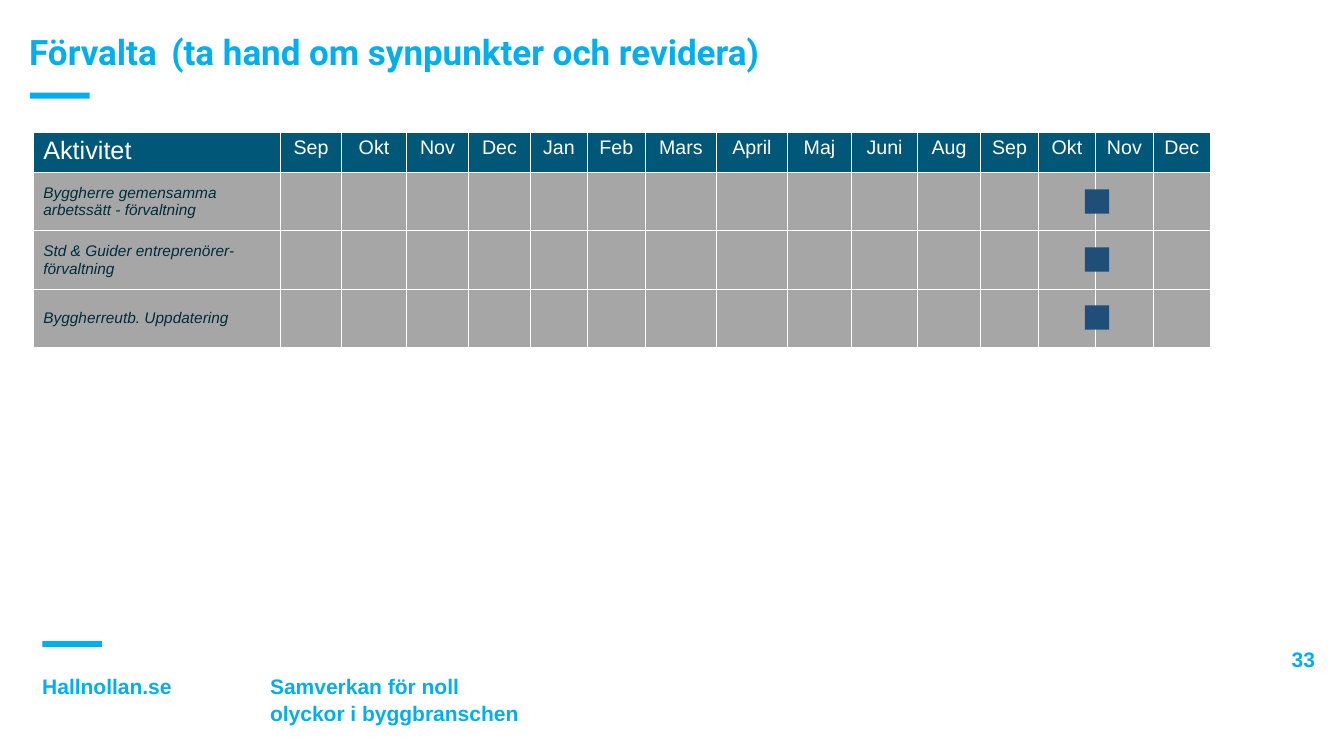
from lxml import etree
from pptx import Presentation
from pptx.dml.color import RGBColor
from pptx.enum import shapes, text
from pptx.oxml import ns
from pptx.util import Inches, Pt

SKY, TEAL, NAVY = "01AFEF", "005777", "1F4E79"
GREY, INK, WHITE = "A6A6A6", "002C3C", "FFFFFF"

MONTHS = ["Sep", "Okt", "Nov", "Dec", "Jan", "Feb", "Mars", "April",
          "Maj", "Juni", "Aug", "Sep", "Okt", "Nov", "Dec"]
ACTIVITIES = ["Byggherre gemensamma arbetssätt - förvaltning",
              "Std & Guider entreprenörer- förvaltning",
              "Byggherreutb. Uppdatering"]
COLUMN_WIDTHS = [2.45, 0.61, 0.64, 0.62, 0.61, 0.57, 0.57, 0.71,
                 0.7, 0.64, 0.65, 0.63, 0.57, 0.57, 0.57, 0.57]
TABLE_TOP, HEADER_HEIGHT, ROW_HEIGHT = 1.31, 0.4, 0.58


def rgb(hex_colour):
    return RGBColor.from_string(hex_colour)


def style_font(font, size, colour, name="Arial", bold=False, italic=False):
    font.name, font.size = name, Pt(size)
    font.bold, font.italic = bold, italic
    font.color.rgb = rgb(colour)


def add_block(slide, left, top, width, height, colour):
    block = slide.shapes.add_shape(
        shapes.MSO_SHAPE.RECTANGLE, Inches(left), Inches(top), Inches(width), Inches(height))
    block.shadow.inherit = False
    block.fill.solid()
    block.fill.fore_color.rgb = rgb(colour)
    block.line.fill.background()


def add_frame(slide, left, top, width, height):
    box = slide.shapes.add_textbox(Inches(left), Inches(top), Inches(width), Inches(height))
    box.text_frame.word_wrap = True
    return box.text_frame


def add_footer(slide, left, top, height, wording, align=text.PP_ALIGN.LEFT):
    frame = add_frame(slide, left, top, 3.52, height)
    frame.text = wording
    for paragraph in frame.paragraphs:
        paragraph.alignment = align
        paragraph.line_spacing = Pt(19)
        style_font(paragraph.runs[0].font, 15, SKY, bold=True)


def add_title(slide):
    frame = add_frame(slide, 0.29, 0.19, 11.5, 0.6)
    frame.margin_left = 0
    frame.vertical_anchor = text.MSO_ANCHOR.BOTTOM
    heading = frame.paragraphs[0]
    heading.line_spacing = 0.7
    for wording, size, font_name in [("Förvalta", 25, "Roboto"), (" ", 37.5, "Arial"),
                                     ("(ta hand om synpunkter och revidera)", 25, "Roboto")]:
        run = heading.add_run()
        run.text = wording
        style_font(run.font, size, SKY, font_name, bold=True)


def set_borders(cell):
    """Put a thin white line on all four sides; lines must precede the fill."""
    properties = cell._tc.get_or_add_tcPr()
    for position, side in enumerate(["lnL", "lnR", "lnT", "lnB"]):
        line = etree.Element(ns.qn(f"a:{side}"), w=str(Pt(1)))
        fill = etree.SubElement(line, ns.qn("a:solidFill"))
        etree.SubElement(fill, ns.qn("a:srgbClr"), val=WHITE)
        properties.insert(position, line)


def fill_cell(cell, wording, colour, size, font_colour, italic=False):
    cell.fill.solid()
    cell.fill.fore_color.rgb = rgb(colour)
    set_borders(cell)
    cell.text = wording
    style_font(cell.text_frame.paragraphs[0].font, size, font_colour, italic=italic)
    for run in cell.text_frame.paragraphs[0].runs:
        style_font(run.font, size, font_colour, italic=italic)


def add_schedule(slide):
    schedule = slide.shapes.add_table(
        len(ACTIVITIES) + 1, len(COLUMN_WIDTHS), Inches(0.33), Inches(TABLE_TOP),
        Inches(sum(COLUMN_WIDTHS)),
        Inches(HEADER_HEIGHT + ROW_HEIGHT * len(ACTIVITIES))).table
    for column, width in zip(schedule.columns, COLUMN_WIDTHS):
        column.width = Inches(width)
    schedule.rows[0].height = Inches(HEADER_HEIGHT)

    fill_cell(schedule.cell(0, 0), "Aktivitet", TEAL, 18, WHITE)
    for column, month in enumerate(MONTHS, start=1):
        month_cell = schedule.cell(0, column)
        fill_cell(month_cell, month, TEAL, 14, WHITE)
        month_cell.text_frame.paragraphs[0].alignment = text.PP_ALIGN.CENTER

    for row, activity in enumerate(ACTIVITIES, start=1):
        schedule.rows[row].height = Inches(ROW_HEIGHT)
        for column in range(len(COLUMN_WIDTHS)):
            cell = schedule.cell(row, column)
            fill_cell(cell, "" if column else activity, GREY, 11, INK, italic=True)
            cell.vertical_anchor = text.MSO_ANCHOR.MIDDLE


def add_milestones(slide):
    for row in range(len(ACTIVITIES)):
        add_block(slide, 10.76, 1.88 + row * 0.575, 0.24, 0.24, NAVY)


def main():
    deck = Presentation()
    deck.slide_width, deck.slide_height = Inches(13.33), Inches(7.5)
    slide = deck.slides.add_slide(deck.slide_layouts[6])

    add_footer(slide, 2.58, 6.62, 0.63, "Samverkan för noll\nolyckor i byggbranschen")
    add_footer(slide, 0.32, 6.62, 0.35, "Hallnollan.se")
    add_block(slide, 0.42, 6.36, 0.59, 0.06, SKY)
    add_block(slide, 0.3, 0.92, 0.59, 0.06, SKY)
    add_footer(slide, 9.62, 6.35, 0.35, "33", text.PP_ALIGN.RIGHT)
    add_schedule(slide)
    add_title(slide)
    add_milestones(slide)
    deck.save("out.pptx")


if __name__ == "__main__":
    main()
